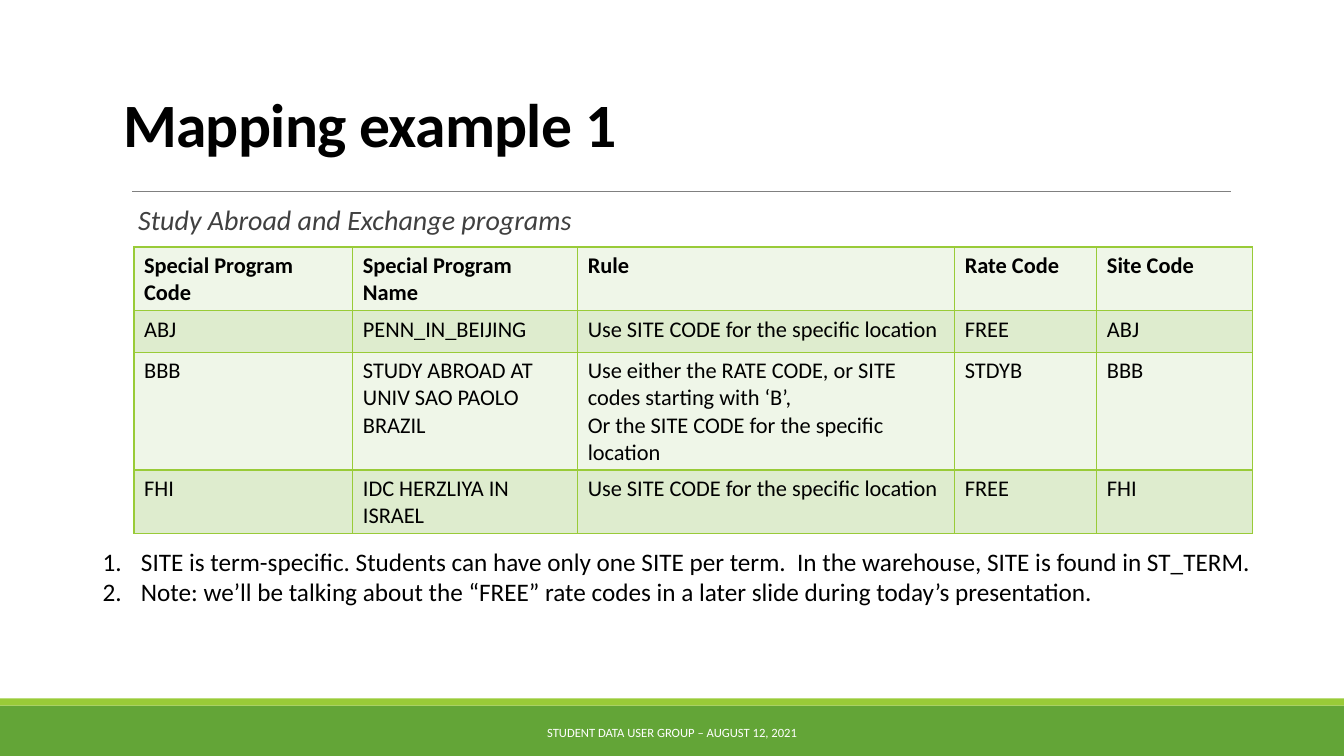
from lxml.etree import SubElement
from pptx import Presentation
from pptx.dml.color import RGBColor
from pptx.enum.shapes import MSO_CONNECTOR as Connector, MSO_SHAPE as Shape
from pptx.enum.text import MSO_ANCHOR as Anchor, MSO_AUTO_SIZE as AutoSize, PP_ALIGN as Align
from pptx.oxml.ns import qn
from pptx.util import Inches, Pt

TITLE = "Mapping example 1"
SUBTITLE = "Study Abroad and Exchange programs"
FOOTER = "STUDENT DATA USER GROUP – AUGUST 12, 2021"
LOCATION_RULE = "Use SITE CODE for the specific location"
PROGRAMS = [
    ("Special Program Code", "Special Program Name", "Rule", "Rate Code", "Site Code"),
    ("ABJ", "PENN_IN_BEIJING", LOCATION_RULE, "FREE", "ABJ"),
    ("BBB", "STUDY ABROAD AT UNIV SAO PAOLO BRAZIL",
     "Use either the RATE CODE, or SITE codes starting with ‘B’,\n"
     "Or the SITE CODE for the specific location", "STDYB", "BBB"),
    ("FHI", "IDC HERZLIYA IN ISRAEL", LOCATION_RULE, "FREE", "FHI"),
]
NOTES = [
    "SITE is term-specific. Students can have only one SITE per term.  "
    "In the warehouse, SITE is found in ST_TERM.",
    "Note: we’ll be talking about the “FREE” rate codes in a later slide "
    "during today’s presentation.",
]
COLUMN_WIDTHS = (2.17, 2.23, 3.74, 1.41, 1.54)
ROW_HEIGHTS = (0.63, 0.41, 1.17, 0.63)

FONT = "Calibri"
BLACK = RGBColor(0x00, 0x00, 0x00)
WHITE = RGBColor(0xFF, 0xFF, 0xFF)
DARK_GRAY = RGBColor(0x40, 0x40, 0x40)
RULE_GRAY = RGBColor(0x80, 0x80, 0x80)
GREEN = RGBColor(0x63, 0xA5, 0x37)
LIME = RGBColor(0x99, 0xCB, 0x38)
ROW_FILLS = (RGBColor(0xEF, 0xF6, 0xE8), RGBColor(0xDE, 0xEC, 0xCE))


def place(shape, left, top, width, height):
    shape.left, shape.top = Inches(left), Inches(top)
    shape.width, shape.height = Inches(width), Inches(height)


def style(frame, size, color, bold=False, italic=False):
    for para in frame.paragraphs:
        for span in para.runs:
            font = span.font
            font.name, font.size = FONT, Pt(size)
            font.bold, font.italic = bold, italic
            font.color.rgb = color


def add_bar(page, top, height, color):
    bar = page.shapes.add_shape(
        Shape.RECTANGLE, 0, Inches(top), Inches(13.33), Inches(height))
    bar.shadow.inherit = False
    bar.fill.solid()
    bar.fill.fore_color.rgb = color
    bar.line.fill.background()


def add_text(page, text, area):
    box = page.shapes.add_textbox(*map(Inches, area))
    frame = box.text_frame
    frame.word_wrap = True
    frame.text = text
    return frame


def set_bullet(para, kind, margin=0, **attributes):
    properties = para._p.get_or_add_pPr()
    properties.set("marL", str(Inches(margin)))
    properties.set("indent", str(-Inches(margin)))
    SubElement(properties, qn(kind), attributes)


def add_borders(cell):
    properties = cell._tc.get_or_add_tcPr()
    for side in ("a:lnL", "a:lnR", "a:lnT", "a:lnB"):
        line = SubElement(properties, qn(side), w=str(Pt(1)))
        SubElement(SubElement(line, qn("a:solidFill")), qn("a:srgbClr"), val=str(LIME))


def add_programs(page):
    table = page.shapes.add_table(
        len(PROGRAMS), len(COLUMN_WIDTHS), Inches(1.33), Inches(2.45),
        Inches(sum(COLUMN_WIDTHS)), Inches(sum(ROW_HEIGHTS))).table
    for column, width in zip(table.columns, COLUMN_WIDTHS):
        column.width = Inches(width)
    for index, (row, height, texts) in enumerate(zip(table.rows, ROW_HEIGHTS, PROGRAMS)):
        row.height = Inches(height)
        for cell, text in zip(row.cells, texts):
            cell.text_frame.text = text
            style(cell.text_frame, 16, BLACK, bold=index == 0)
            add_borders(cell)
            cell.fill.solid()
            cell.fill.fore_color.rgb = ROW_FILLS[index % 2]


def add_headings(page):
    title, body = page.placeholders
    place(title, 1.12, 0.94, 12.3, 0.7)
    frame = title.text_frame
    frame.text = TITLE
    frame.auto_size = AutoSize.NONE
    frame.vertical_anchor = Anchor.BOTTOM
    para = frame.paragraphs[0]
    para.alignment, para.line_spacing = Align.LEFT, 0.85
    style(frame, 44, BLACK, bold=True)
    para.runs[0].font._element.set("spc", "-50")

    place(body, 1.27, 2, 11.15, 4.76)
    frame = body.text_frame
    frame.text = SUBTITLE
    frame.auto_size = AutoSize.NONE
    para = frame.paragraphs[0]
    para.line_spacing, para.space_before, para.space_after = 0.9, Pt(12), Pt(2)
    set_bullet(para, "a:buNone")
    style(frame, 20, DARK_GRAY, italic=True)


def main():
    deck = Presentation()
    deck.slide_width, deck.slide_height = Inches(13.33), Inches(7.5)
    page = deck.slides.add_slide(deck.slide_layouts[1])

    add_bar(page, 7, 0.5, GREEN)
    add_bar(page, 6.93, 0.07, LIME)
    divider = page.shapes.add_connector(
        Connector.STRAIGHT, Inches(1.31), Inches(1.9), Inches(12.21), Inches(1.9))
    divider.line.color.rgb = RULE_GRAY
    divider.line.width = Pt(0.5)
    SubElement(divider._element.spPr, qn("a:effectLst"))

    add_headings(page)
    footer = add_text(page, FOOTER, (4.03, 7.07, 5.27, 0.4))
    footer.vertical_anchor = Anchor.MIDDLE
    footer.paragraphs[0].alignment = Align.CENTER
    style(footer, 9, WHITE)

    notes = add_text(page, "\n".join(NOTES), (0.92, 5.37, 11.7, 0.71))
    notes.auto_size = AutoSize.SHAPE_TO_FIT_TEXT
    for para in notes.paragraphs:
        set_bullet(para, "a:buAutoNum", 0.38, type="arabicPeriod")
    style(notes, 18, BLACK)

    add_programs(page)
    deck.save("out.pptx")


if __name__ == "__main__":
    main()
